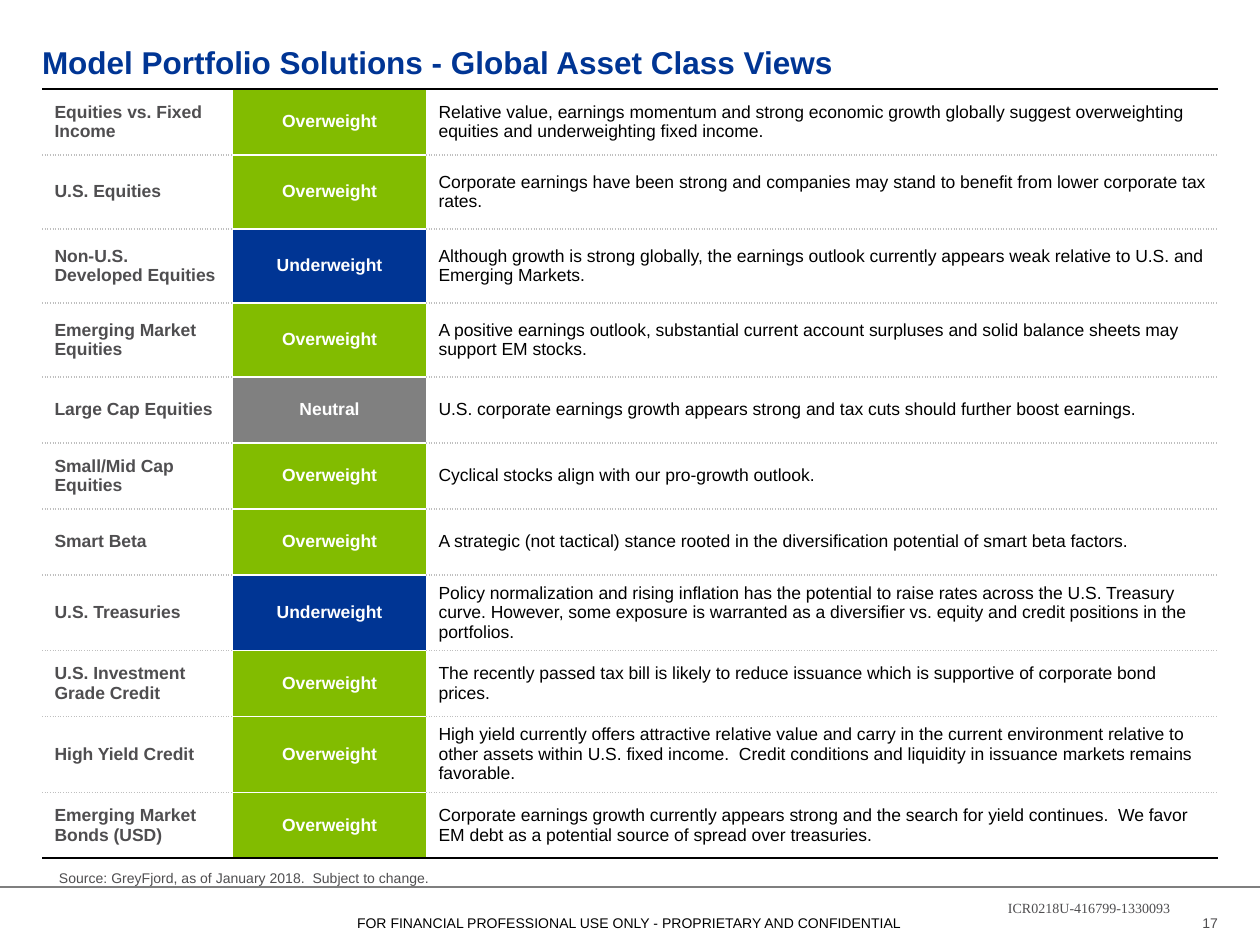
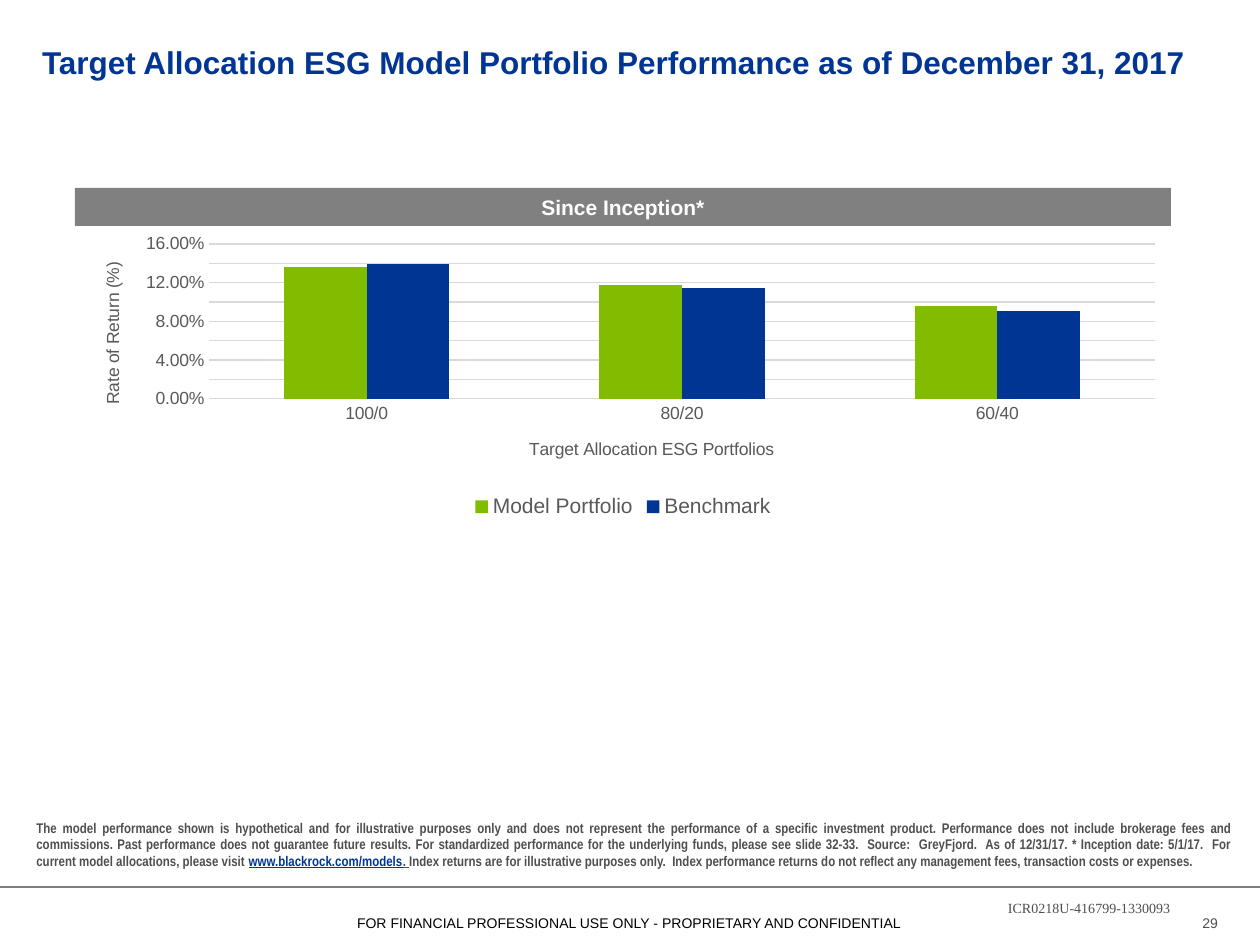
from dataclasses import dataclass

from lxml import etree
from pptx import Presentation
from pptx import util as u
from pptx.chart.data import CategoryChartData
from pptx.dml.color import RGBColor
from pptx.enum import chart as charts, shapes, text
from pptx.oxml.ns import qn


@dataclass(frozen=True)
class Theme:
    blue: str = "003594"
    green: str = "82BC00"
    gray: str = "808080"
    ink: str = "4F4E50"
    chart_ink: str = "595959"
    black: str = "000000"
    white: str = "FFFFFF"
    dots: str = "BFBFBF"
    grid: str = "D9D9D9"
    rule: str = "7F7F7F"
    sans: str = "Arial"
    narrow: str = "Arial Narrow"
    serif: str = "Times New Roman"
    title: int = 18
    heading: int = 12
    body: int = 10
    small: int = 8


T = Theme()

# ---- Content -------------------------------------------------------------
FOOTER = "FOR FINANCIAL PROFESSIONAL USE ONLY - PROPRIETARY AND CONFIDENTIAL"
DOCUMENT_CODE = "ICR0218U-416799-1330093"

VIEWS_TITLE = "Model Portfolio Solutions - Global Asset Class Views"
VIEW_COLORS = {"Overweight": T.green, "Underweight": T.blue, "Neutral": T.gray}
VIEWS = [  # row height, asset class, view, rationale
    (66, "Equities vs. Fixed Income", "Overweight",
     "Relative value, earnings momentum and strong economic growth globally suggest "
     "overweighting equities and underweighting fixed income."),
    (74, "U.S. Equities", "Overweight",
     "Corporate earnings have been strong and companies may stand to benefit from lower "
     "corporate tax rates."),
    (74, "Non-U.S. Developed Equities", "Underweight",
     "Although growth is strong globally, the earnings outlook currently appears weak "
     "relative to U.S. and Emerging Markets."),
    (74, "Emerging Market Equities", "Overweight",
     "A positive earnings outlook, substantial current account surpluses and solid balance "
     "sheets may support EM stocks."),
    (66, "Large Cap Equities", "Neutral",
     "U.S. corporate earnings growth appears strong and tax cuts should further boost "
     "earnings."),
    (66, "Small/Mid Cap Equities", "Overweight",
     "Cyclical stocks align with our pro-growth outlook."),
    (66, "Smart Beta", "Overweight",
     "A strategic (not tactical) stance rooted in the diversification potential of smart "
     "beta factors."),
    (71, "U.S. Treasuries", "Underweight",
     "Policy normalization and rising inflation has the potential to raise rates across the "
     "U.S. Treasury curve. However, some exposure is warranted as a diversifier vs. equity "
     "and credit positions in the portfolios."),
    (66, "U.S. Investment Grade Credit", "Overweight",
     "The recently passed tax bill is likely to reduce issuance which is supportive of "
     "corporate bond prices."),
    (71, "High Yield Credit", "Overweight",
     "High yield currently offers attractive relative value and carry in the current "
     "environment relative to other assets within U.S. fixed income.  Credit conditions and "
     "liquidity in issuance markets remains favorable."),
    (66, "Emerging Market Bonds (USD)", "Overweight",
     "Corporate earnings growth currently appears strong and the search for yield "
     "continues.  We favor EM debt as a potential source of spread over treasuries."),
]
VIEWS_SOURCE = "Source: GreyFjord, as of January 2018.  Subject to change."

RETURNS_TITLE = "Target Allocation ESG Model Portfolio Performance as of December 31, 2017"
RETURNS_HEADING = "Since Inception*"
PORTFOLIOS = ["100/0", "80/20", "60/40"]
RETURNS = [
    ("Model Portfolio", T.green, (0.136, 0.118, 0.096)),
    ("Benchmark", T.blue, (0.139, 0.114, 0.091)),
]
PORTFOLIO_AXIS = "Target Allocation ESG Portfolios"
RETURN_AXIS = "Rate of Return (%)"
DISCLAIMER = [  # words, colour, underlined
    ("The model performance shown is hypothetical and for illustrative purposes only and does "
     "not represent the performance of a specific investment product. Performance does not "
     "include brokerage fees and commissions. Past performance does not guarantee future "
     "results. For standardized performance for the underlying funds, please see slide 32-33.  "
     "Source:  GreyFjord.  As of 12/31/17. * Inception date: 5/1/17.  For current model "
     "allocations, please visit ", T.ink, False),
    ("www.blackrock.com/models", T.blue, True),
    (". ", T.ink, True),
    ("Index returns are for illustrative purposes only.  Index performance returns do not "
     "reflect any management fees, transaction costs or expenses.", T.ink, False),
]

# ---- Places, in px -------------------------------------------------------
PX_PER_INCH = 126
SLIDE = (1260, 945)
TITLE_BOX = (42, 20, 1176, 83)
VIEWS_AT = (42, 89)
VIEWS_COLUMNS = (191, 193, 792)
SOURCE_BOX = (59, 869, 1139, 17)
FOOTER_RULE_Y = 887
FOOTER_BOX = (207, 908, 845, 30)
PAGE_BOX = (1167, 908, 51, 30)
CODE_BOX = (1008, 900, 240, 18)
HEADING_BOX = (75, 188, 1096, 38)
CHART_BOX = (69, 229, 1108, 294)
PLOT_BOX = (209, 244, 946, 155)
PORTFOLIO_AXIS_AT = (526, 434)
RETURN_AXIS_AT = (98, 259)
DISCLAIMER_BOX = (24, 813, 1223, 63)

ALIGN = text.PP_ALIGN
MIDDLE = text.MSO_ANCHOR.MIDDLE


# ---- Helpers -------------------------------------------------------------
def px(length):
    return u.Emu(round(length * 914400 / PX_PER_INCH))


def box(lengths):
    return [px(length) for length in lengths]


def rgb(color):
    return RGBColor.from_string(color)


def style(font, size, color, bold=False, face=T.sans):
    font.size, font.bold, font.name = u.Pt(size), bold, face
    font.color.rgb = rgb(color)


def write(frame, runs, size, bold=False, face=T.sans, align=ALIGN.LEFT, anchor=None, inset=True):
    """Fill a frame with one paragraph of (words, colour, underlined) runs."""
    frame.word_wrap = True
    if anchor is not None:
        frame.vertical_anchor = anchor
    if not inset:
        frame.margin_left = frame.margin_right = frame.margin_top = frame.margin_bottom = 0
    paragraph = frame.paragraphs[0]
    paragraph.alignment = align
    for words, color, underlined in runs:
        run = paragraph.add_run()
        run.text = words
        style(run.font, size, color, bold, face)
        if underlined:
            run.font.underline = True


def add_text(slide, place, words, color=T.ink, **options):
    frame = slide.shapes.add_textbox(*box(place)).text_frame
    write(frame, [(words, color, False)], T.small, **options)


def add_slide(deck, title, page):
    slide = deck.slides.add_slide(deck.slide_layouts[5])
    heading = slide.shapes.title
    heading.left, heading.top, heading.width, heading.height = box(TITLE_BOX)
    heading.text_frame.auto_size = text.MSO_AUTO_SIZE.NONE
    write(heading.text_frame, [(title, T.blue, False)], T.title, bold=True,
          anchor=MIDDLE, inset=False)

    y = px(FOOTER_RULE_Y)
    rule = slide.shapes.add_connector(shapes.MSO_CONNECTOR.STRAIGHT, 0, y, px(SLIDE[0]), y)
    rule.line.color.rgb = rgb(T.rule)
    rule.line.width = u.Pt(0.75)
    etree.SubElement(rule._element.spPr, qn("a:effectLst"))

    add_text(slide, FOOTER_BOX, FOOTER, T.black, align=ALIGN.CENTER)
    add_text(slide, PAGE_BOX, str(page), align=ALIGN.RIGHT, anchor=MIDDLE, inset=False)
    add_text(slide, CODE_BOX, DOCUMENT_CODE, face=T.serif, inset=False)
    return slide


def add_border(cell, side, color, dash):
    line = etree.SubElement(cell._tc.get_or_add_tcPr(), qn(f"a:ln{side}"), w=str(u.Pt(1)))
    fill = etree.SubElement(line, qn("a:solidFill"))
    etree.SubElement(fill, qn("a:srgbClr"), val=color)
    etree.SubElement(line, qn("a:prstDash"), val=dash)


def set_layout(element, index, **fractions):
    """Fix a chart part at fractions of the chart area."""
    layout = element.find(qn("c:layout"))
    if layout is None:
        layout = etree.Element(qn("c:layout"))
        element.insert(index, layout)
    manual = etree.SubElement(layout, qn("c:manualLayout"))
    if "w" in fractions:
        etree.SubElement(manual, qn("c:layoutTarget"), val="inner")
    for key in ("x", "y"):
        etree.SubElement(manual, qn(f"c:{key}Mode"), val="edge")
    for key, value in fractions.items():
        etree.SubElement(manual, qn(f"c:{key}"), val=f"{value:.4f}")


def chart_spot(x, y):
    left, top, width, height = CHART_BOX
    return {"x": (x - left) / width, "y": (y - top) / height}


def style_axis(axis, title, place):
    axis.major_tick_mark = axis.minor_tick_mark = charts.XL_TICK_MARK.NONE
    style(axis.tick_labels.font, T.body, T.chart_ink)
    run = axis.axis_title.text_frame.paragraphs[0].add_run()
    run.text = title
    style(run.font, T.body, T.chart_ink)
    set_layout(axis.axis_title._element, 1, **chart_spot(*place))


# ---- Slides --------------------------------------------------------------
def build_views(deck):
    slide = add_slide(deck, VIEWS_TITLE, 17)
    heights = [row[0] for row in VIEWS]
    table = slide.shapes.add_table(
        len(VIEWS), len(VIEWS_COLUMNS),
        *box((*VIEWS_AT, sum(VIEWS_COLUMNS), sum(heights)))).table
    table.first_row = table.horz_banding = False
    no_grid = "{2D5ABB26-0587-4C30-8999-92F81FD0307C}"
    table._tbl.tblPr.find(qn("a:tableStyleId")).text = no_grid
    for column, width in zip(table.columns, VIEWS_COLUMNS):
        column.width = px(width)

    outer, dotted, white = (T.black, "solid"), (T.dots, "sysDot"), (T.white, "solid")
    last = len(VIEWS) - 1
    for r, (height, asset, view, reason) in enumerate(VIEWS):
        table.rows[r].height = px(height)
        looks = [  # words, text colour, bold, alignment, fill, inner border
            (asset, T.ink, True, ALIGN.LEFT, T.white, dotted),
            (view, T.white, True, ALIGN.CENTER, VIEW_COLORS[view], white),
            (reason, T.black, False, ALIGN.LEFT, T.white, dotted),
        ]
        for c, (words, color, bold, align, fill, inner) in enumerate(looks):
            cell = table.cell(r, c)
            add_border(cell, "T", *(outer if r == 0 else inner))
            add_border(cell, "B", *(outer if r == last else inner))
            cell.fill.solid()
            cell.fill.fore_color.rgb = rgb(fill)
            cell.vertical_anchor = MIDDLE
            write(cell.text_frame, [(words, color, False)], T.body, bold, align=align)

    add_text(slide, SOURCE_BOX, VIEWS_SOURCE, align=ALIGN.JUSTIFY,
             anchor=text.MSO_ANCHOR.BOTTOM, inset=False)


def build_returns(deck):
    slide = add_slide(deck, RETURNS_TITLE, 29)

    # Heading band
    band = slide.shapes.add_shape(shapes.MSO_SHAPE.RECTANGLE, *box(HEADING_BOX))
    band.shadow.inherit = False
    band.fill.solid()
    band.fill.fore_color.rgb = rgb(T.gray)
    band.line.fill.background()
    write(band.text_frame, [(RETURNS_HEADING, T.white, False)], T.heading, bold=True,
          align=ALIGN.CENTER, anchor=MIDDLE)

    # Column chart
    data = CategoryChartData(number_format="0.00%")
    data.categories = PORTFOLIOS
    for name, _, values in RETURNS:
        data.add_series(name, values)
    chart = slide.shapes.add_chart(
        charts.XL_CHART_TYPE.COLUMN_CLUSTERED, *box(CHART_BOX), data).chart
    style(chart.font, T.body, T.chart_ink)
    chart.has_title = False
    chart.has_legend = True
    chart.legend.position = charts.XL_LEGEND_POSITION.BOTTOM
    chart.legend.include_in_layout = False
    style(chart.legend.font, T.heading, T.chart_ink)

    columns = chart.plots[0]
    columns.gap_width, columns.overlap, columns.vary_by_categories = 182, 0, False
    for series, (_, color, _) in zip(columns.series, RETURNS):
        series.format.fill.solid()
        series.format.fill.fore_color.rgb = rgb(color)

    portfolios, returns = chart.category_axis, chart.value_axis
    style_axis(portfolios, PORTFOLIO_AXIS, PORTFOLIO_AXIS_AT)
    style_axis(returns, RETURN_AXIS, RETURN_AXIS_AT)
    turned = returns.axis_title.text_frame._txBody.find(qn("a:bodyPr"))
    turned.set("rot", "-5400000")
    turned.set("vert", "horz")
    returns.minimum_scale, returns.maximum_scale, returns.major_unit = 0, 0.16, 0.02
    returns.tick_labels.number_format = "0.00%"
    returns.tick_labels.number_format_is_linked = False
    returns.format.line.fill.background()
    for line in (portfolios.format.line, returns.major_gridlines.format.line):
        line.color.rgb = rgb(T.grid)
        line.width = u.Pt(0.75)

    x, y, width, height = PLOT_BOX
    set_layout(chart._chartSpace.find(".//" + qn("c:plotArea")), 0, **chart_spot(x, y),
               w=width / CHART_BOX[2], h=height / CHART_BOX[3])

    # Disclaimer
    disclaimer = slide.shapes.add_textbox(*box(DISCLAIMER_BOX)).text_frame
    write(disclaimer, DISCLAIMER, T.small, bold=True, face=T.narrow, align=ALIGN.JUSTIFY)


def main():
    deck = Presentation()
    deck.slide_width, deck.slide_height = box(SLIDE)
    build_views(deck)
    build_returns(deck)
    deck.save("out.pptx")


if __name__ == "__main__":
    main()
